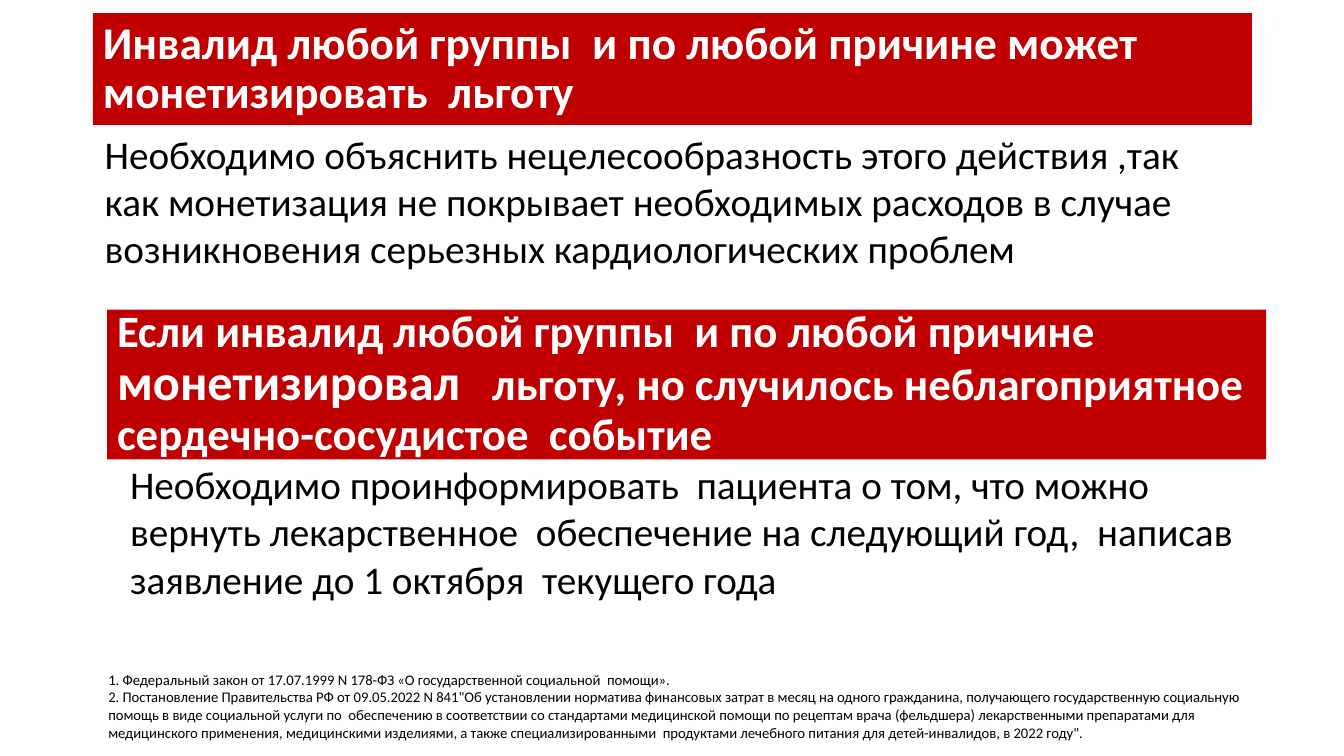
from pptx import Presentation
from pptx import util as u
from pptx.dml import color
from pptx.enum import shapes, text

RED, WHITE, BLACK = "C00000", "FFFFFF", "000000"


def paint(fill, hex_value):
    fill.solid()
    fill.fore_color.rgb = color.RGBColor.from_string(hex_value)


def write(frame, paragraphs, size, hex_value, bold=False):
    """Fill a frame with left-aligned paragraphs, each given as a list of runs."""
    frame.word_wrap = True
    frame.auto_size = text.MSO_AUTO_SIZE.NONE
    for index, pieces in enumerate(paragraphs):
        paragraph = frame.paragraphs[0] if index == 0 else frame.add_paragraph()
        paragraph.alignment = text.PP_ALIGN.LEFT
        for piece in pieces:
            paragraph.add_run().text = piece
        paragraph.font.name = "Calibri"
        paragraph.font.size = u.Pt(size)
        paragraph.font.bold = bold
        paint(paragraph.font.fill, hex_value)


deck = Presentation()
deck.slide_width, deck.slide_height = u.Cm(33.87), u.Cm(19.05)
slide = deck.slides.add_slide(deck.slide_layouts[5])

# Red headings: the right to cash out, and the case after cashing out
right_heading = slide.shapes.title
right_heading.left, right_heading.top = u.Cm(2.34), u.Cm(0.33)
right_heading.width, right_heading.height = u.Cm(29.21), u.Cm(2.82)
event_heading = slide.shapes.add_shape(
    shapes.MSO_SHAPE.RECTANGLE, u.Cm(2.7), u.Cm(7.8), u.Cm(29.21), u.Cm(3.78))
event_heading.shadow.inherit = False
event_heading.line.fill.background()

headings = [
    (right_heading, 32.4,
     ["Инвалид любой группы  и по любой причине может монетизировать  льготу"]),
    (event_heading, 32,
     ["Если инвалид любой группы  и по любой причине ", "монетизировал ",
      "  льготу, но случилось неблагоприятное сердечно-сосудистое  событие"]),
]
for heading, size, pieces in headings:
    paint(heading.fill, RED)
    write(heading.text_frame, [pieces], size, WHITE, bold=True)
    heading.text_frame.vertical_anchor = text.MSO_ANCHOR.MIDDLE
    heading.text_frame.paragraphs[0].line_spacing = 0.9
event_heading.text_frame.paragraphs[0].runs[1].font.size = u.Pt(36)

# Advice under the first heading
explanation = slide.shapes.add_textbox(u.Cm(2.39), u.Cm(3.15), u.Cm(28.85), u.Cm(3.84))
write(explanation.text_frame, [[
    "Необходимо объяснить нецелесообразность этого действия ,так как монетизация "
    "не покрывает необходимых расходов в случае возникновения серьезных "
    "кардиологических проблем"]], 28, BLACK)

# Advice under the second heading, and the legal sources
tight_boxes = [
    (3.25, 11.58, 28.65, 3.63, 28, [[
        "Необходимо проинформировать  пациента о том, что можно вернуть лекарственное  "
        "обеспечение на следующий год,  написав заявление до 1 октября  текущего года"]]),
    (2.7, 16.87, 29.57, 1.83, 10.5, [
        ["1. Федеральный закон от 17.07.1999 N 178-ФЗ «О государственной социальной  помощи»."],
        ["2. Постановление Правительства РФ от 09.05.2022 N 841\"Об установлении норматива "
         "финансовых затрат в месяц на одного гражданина, получающего государственную "
         "социальную помощь в виде социальной услуги по  обеспечению в соответствии со "
         "стандартами медицинской помощи по рецептам врача (фельдшера) лекарственными "
         "препаратами для медицинского применения, медицинскими изделиями, а также "
         "специализированными  продуктами лечебного питания для детей-инвалидов, "
         "в 2022 году\"."]]),
]
for left, top, width, height, size, paragraphs in tight_boxes:
    frame = slide.shapes.add_textbox(
        u.Cm(left), u.Cm(top), u.Cm(width), u.Cm(height)).text_frame
    frame.margin_left = frame.margin_top = u.Cm(0.03)
    frame.margin_right = frame.margin_bottom = 0
    write(frame, paragraphs, size, BLACK)
    frame.paragraphs[0].space_before = u.Pt(1)

deck.save("out.pptx")
